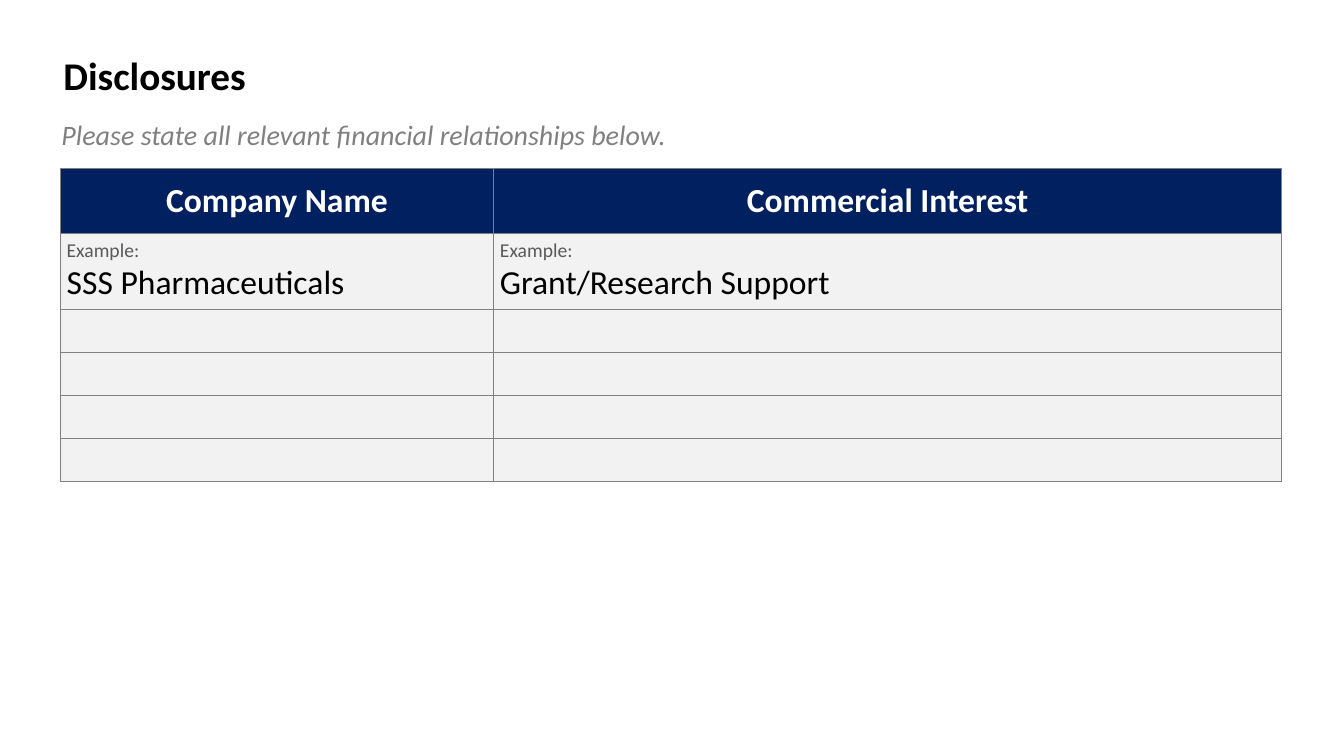
"""Build the disclosures slide with its table of financial relationships."""
from dataclasses import dataclass

import lxml.etree
import pptx
import pptx.dml.color
import pptx.enum.text
import pptx.oxml.ns
import pptx.slide
import pptx.table
import pptx.text.text
import pptx.util

Cm = pptx.util.Cm
Color = pptx.dml.color.RGBColor
Align = pptx.enum.text.PP_ALIGN

FONT = "Calibri"
BLACK = Color(0x00, 0x00, 0x00)
WHITE = Color(0xFF, 0xFF, 0xFF)
NAVY = Color(0x00, 0x20, 0x60)
PALE = Color(0xF2, 0xF2, 0xF2)
GRAY = Color(0x80, 0x80, 0x80)
DARK = Color(0x59, 0x59, 0x59)

WIDTHS = (10.92, 19.86)
HEIGHTS = (1.64, 1.92, 1.08, 1.08, 1.08, 1.08)


@dataclass(frozen=True)
class Style:
    size: int
    color: Color
    bold: bool = False
    italic: bool = False
    align: Align = Align.LEFT


@dataclass(frozen=True)
class Label:
    text: str
    left: float
    top: float
    width: float
    height: float
    style: Style
    wrap: bool


HEAD = Style(24, WHITE, bold=True, align=Align.CENTER)
HINT = Style(14, DARK)
ENTRY = Style(24, BLACK)

LABELS = (
    Label("Disclosures", 1.35, 1.17, 5.16, 1.45, Style(28, BLACK, bold=True), False),
    Label("Please state all relevant financial relationships below.",
          1.3, 2.84, 22.66, 1.12, Style(20, GRAY, italic=True), True),
)
ROWS = (
    (("Company Name",), ("Commercial Interest",)),
    (("Example:", "SSS Pharmaceuticals"), ("Example:", "Grant/Research Support")),
)
STYLES = ((HEAD,), (HINT, ENTRY))


def format_text(para: pptx.text.text._Paragraph, style: Style) -> None:
    """Apply a style to a paragraph and its runs."""
    para.alignment = style.align
    for run in para.runs:
        font = run.font
        font.name = FONT
        font.size = pptx.util.Pt(style.size)
        font.bold = style.bold
        font.italic = style.italic
        font.color.rgb = style.color


def add_label(slide: pptx.slide.Slide, label: Label) -> None:
    """Add a text box that grows with its text."""
    box = slide.shapes.add_textbox(
        Cm(label.left), Cm(label.top), Cm(label.width), Cm(label.height))
    frame = box.text_frame
    frame.text = label.text
    frame.word_wrap = label.wrap
    frame.auto_size = pptx.enum.text.MSO_AUTO_SIZE.SHAPE_TO_FIT_TEXT
    format_text(frame.paragraphs[0], label.style)


def format_cell(cell: pptx.table._Cell, fill: Color) -> None:
    """Set the borders, fill, margins and anchor of a cell."""
    props = cell._tc.get_or_add_tcPr()
    qn = pptx.oxml.ns.qn
    for side in ("L", "R", "T", "B"):
        line = lxml.etree.SubElement(
            props, qn(f"a:ln{side}"), w=str(pptx.util.Pt(0.75)))
        solid = lxml.etree.SubElement(line, qn("a:solidFill"))
        lxml.etree.SubElement(solid, qn("a:srgbClr"), val=str(GRAY))
    cell.fill.solid()
    cell.fill.fore_color.rgb = fill
    cell.margin_left = cell.margin_right = Cm(0.16)
    cell.margin_top = cell.margin_bottom = Cm(0)
    cell.vertical_anchor = pptx.enum.text.MSO_ANCHOR.MIDDLE


def add_grid(slide: pptx.slide.Slide) -> None:
    """Add the table with its header, example and empty rows."""
    grid = slide.shapes.add_table(
        len(HEIGHTS), len(WIDTHS), Cm(1.52), Cm(4.24),
        Cm(sum(WIDTHS)), Cm(sum(HEIGHTS))).table
    grid.horz_banding = False
    for col, width in zip(grid.columns, WIDTHS):
        col.width = Cm(width)
    for index, (row, height) in enumerate(zip(grid.rows, HEIGHTS)):
        row.height = Cm(height)
        for cell in row.cells:
            format_cell(cell, PALE if index else NAVY)
    for row, texts, styles in zip(grid.rows, ROWS, STYLES):
        for cell, lines in zip(row.cells, texts):
            cell.text_frame.text = "\n".join(lines)
            for para, style in zip(cell.text_frame.paragraphs, styles):
                format_text(para, style)


def main() -> None:
    """Create and save the deck."""
    deck = pptx.Presentation()
    deck.slide_width = Cm(33.87)
    deck.slide_height = Cm(19.05)
    slide = deck.slides.add_slide(deck.slide_layouts[6])
    add_grid(slide)
    for label in LABELS:
        add_label(slide, label)
    deck.save("out.pptx")


if __name__ == "__main__":
    main()
